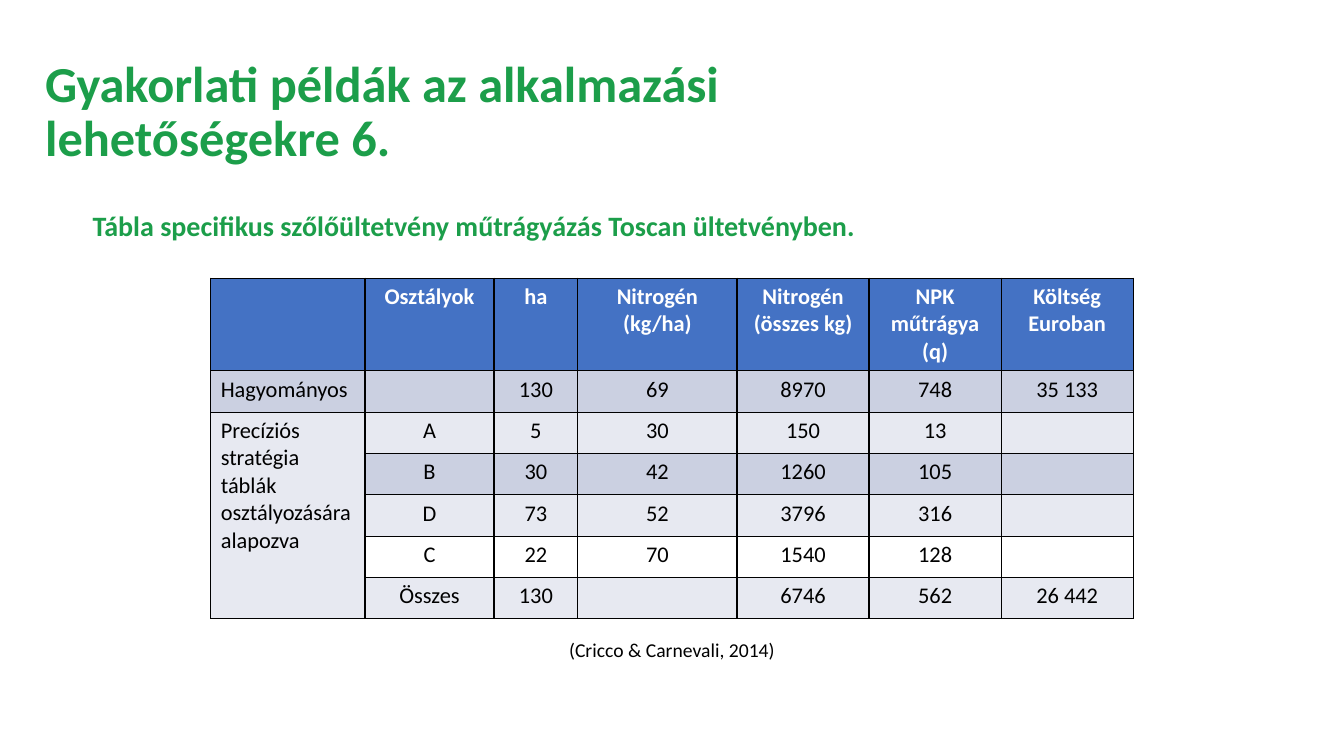
from lxml import etree
from pptx import Presentation
from pptx.dml.color import RGBColor
from pptx.enum import text
from pptx.oxml import ns
from pptx.util import Inches, Pt

GREEN = RGBColor(0x1C, 0x9E, 0x4A)
BLUE = RGBColor(0x44, 0x72, 0xC4)
DARK_BAND = RGBColor(0xCB, 0xD0, 0xE1)
LIGHT_BAND = RGBColor(0xE7, 0xE9, 0xF1)
WHITE = RGBColor(0xFF, 0xFF, 0xFF)
BLACK = RGBColor(0, 0, 0)

LEFT, CENTER = text.PP_ALIGN.LEFT, text.PP_ALIGN.CENTER

COLUMN_WIDTHS = [1.53, 1.28, 0.83, 1.58, 1.31, 1.31, 1.31]
HEADER_HEIGHT, ROW_HEIGHT = 0.92, 0.41
ROWS = [
    ["", "Osztályok", "ha", "Nitrogén (kg/ha)", "Nitrogén (összes kg)",
     "NPK műtrágya (q)", "Költség Euroban"],
    ["Hagyományos", "", "130", "69", "8970", "748", "35 133"],
    ["Precíziós stratégia táblák osztályozására alapozva",
     "A", "5", "30", "150", "13", ""],
    ["", "B", "30", "42", "1260", "105", ""],
    ["", "D", "73", "52", "3796", "316", ""],
    ["", "C", "22", "70", "1540", "128", ""],
    ["", "Összes", "130", "", "6746", "562", "26 442"],
]
ROW_FILLS = [BLUE, DARK_BAND, LIGHT_BAND, DARK_BAND, LIGHT_BAND, WHITE, LIGHT_BAND]


class SlideBuilder:
    font_name = "Calibri"

    def __init__(self, slide):
        self.slide = slide

    def style(self, paragraph, size, color, bold=False, align=LEFT):
        paragraph.alignment = align
        font = paragraph.font
        font.name, font.size, font.bold = self.font_name, Pt(size), bold
        font.color.rgb = color

    def text_box(self, content, left, top, width, height, size, color, bold=False,
                 align=LEFT, anchor=text.MSO_ANCHOR.TOP, line_spacing=1.0):
        shape = self.slide.shapes.add_textbox(
            Inches(left), Inches(top), Inches(width), Inches(height))
        frame = shape.text_frame
        frame.word_wrap = True
        frame.vertical_anchor = anchor
        paragraph = frame.paragraphs[0]
        paragraph.text = content
        paragraph.line_spacing = line_spacing
        self.style(paragraph, size, color, bold, align)

    def cell_borders(self, cell):
        properties = cell._tc.get_or_add_tcPr()
        for side in ("lnL", "lnR", "lnT", "lnB"):
            line = etree.SubElement(properties, ns.qn(f"a:{side}"), w=str(Pt(1)))
            fill = etree.SubElement(line, ns.qn("a:solidFill"))
            etree.SubElement(fill, ns.qn("a:srgbClr"), val=str(BLACK))

    def table(self, left, top):
        height = HEADER_HEIGHT + ROW_HEIGHT * (len(ROWS) - 1)
        table = self.slide.shapes.add_table(
            len(ROWS), len(COLUMN_WIDTHS), Inches(left), Inches(top),
            Inches(sum(COLUMN_WIDTHS)), Inches(height)).table
        table.horz_banding = False
        for column, width in zip(table.columns, COLUMN_WIDTHS):
            column.width = Inches(width)
        for r, (values, fill) in enumerate(zip(ROWS, ROW_FILLS)):
            header = r == 0
            table.rows[r].height = Inches(HEADER_HEIGHT if header else ROW_HEIGHT)
            for c, value in enumerate(values):
                cell = table.cell(r, c)
                self.cell_borders(cell)
                cell.fill.solid()
                cell.fill.fore_color.rgb = fill
                cell.text = value
                self.style(cell.text_frame.paragraphs[0], 16,
                           WHITE if header else BLACK, header, CENTER if c else LEFT)
        table.cell(2, 0).merge(table.cell(len(ROWS) - 1, 0))


def main():
    presentation = Presentation()
    presentation.slide_width = Inches(13.33)
    presentation.slide_height = Inches(7.5)
    builder = SlideBuilder(presentation.slides.add_slide(presentation.slide_layouts[6]))
    builder.text_box("Gyakorlati példák az alkalmazási \vlehetőségekre 6.",
                     0.35, 0.4, 12.64, 1.45, 36, GREEN, bold=True,
                     anchor=text.MSO_ANCHOR.MIDDLE, line_spacing=0.9)
    builder.text_box("Tábla specifikus szőlőültetvény műtrágyázás Toscan ültetvényben.",
                     0.82, 2.06, 11.5, 0.54, 20, GREEN, bold=True, line_spacing=0.9)
    builder.table(2.09, 2.76)
    builder.text_box("(Cricco & Carnevali, 2014)", 4.52, 6.28, 4.29, 0.34,
                     14, BLACK, align=CENTER)
    presentation.save("out.pptx")


if __name__ == "__main__":
    main()
